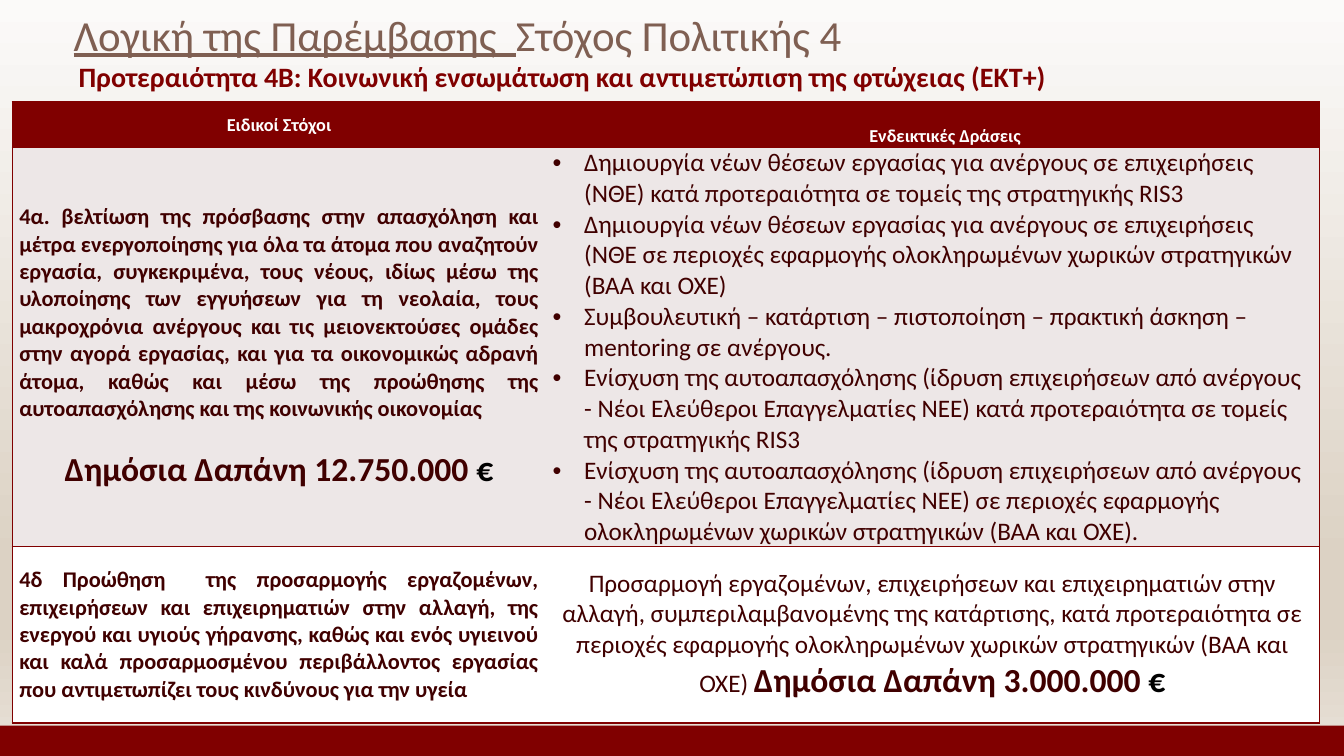
from dataclasses import dataclass

from lxml.etree import SubElement
from pptx import Presentation
from pptx.dml.color import RGBColor
from pptx.enum.shapes import MSO_SHAPE
from pptx.enum.text import MSO_ANCHOR, MSO_AUTO_SIZE, PP_ALIGN
from pptx.oxml.ns import qn
from pptx.slide import Slide
from pptx.table import _Cell
from pptx.text.text import TextFrame
from pptx.util import Pt


@dataclass(frozen=True)
class Theme:
    font: str = "Calibri"
    maroon: str = "800000"
    ink: str = "400000"
    title: str = "7F5F52"
    black: str = "000000"
    white: str = "FFFFFF"
    band: str = "EDE7E7"
    backdrop: tuple = ((0, "FBFAF9"), (74, "DCD2C4"), (83, "DCD2C4"), (100, "E8E1D8"))
    title_size: float = 30.6
    subtitle_size: float = 20
    header_size: float = 13
    goal_size: float = 16
    action_size: float = 18
    spend_size: float = 24


THEME = Theme()


@dataclass(frozen=True)
class Span:
    text: str
    size: float | None = None
    bold: bool | None = None
    color: str | None = None
    underline: bool | None = None


@dataclass(frozen=True)
class Para:
    spans: tuple[Span, ...]
    size: float
    color: str = THEME.ink
    bold: bool = False
    align: PP_ALIGN = PP_ALIGN.LEFT
    bullet: bool = False
    before: float = 0
    line: float | None = None
    left: float = 0


@dataclass(frozen=True)
class CellContent:
    paras: tuple[Para, ...]
    fill: str
    top_margin: float = 0


def write(frame: TextFrame, paras: tuple[Para, ...]) -> None:
    frame.word_wrap = True
    for index, item in enumerate(paras):
        para = frame.paragraphs[0] if index == 0 else frame.add_paragraph()
        para.alignment = item.align
        if item.before:
            para.space_before = Pt(item.before)
        if item.line:
            para.line_spacing = item.line
        properties = para._p.get_or_add_pPr()
        indent = 22.5 if item.bullet else 0
        properties.set("marL", str(Pt(item.left + indent)))
        properties.set("indent", str(-Pt(indent)))
        if item.bullet:
            SubElement(properties, qn("a:buFont")).set("typeface", "Arial")
            SubElement(properties, qn("a:buChar")).set("char", "•")
        para.font.name = THEME.font
        para.font.size = Pt(item.size)
        para.font.bold = item.bold
        para.font.color.rgb = RGBColor.from_string(item.color)
        for piece in item.spans:
            span = para.add_run()
            span.text = piece.text
            if piece.size:
                span.font.size = Pt(piece.size)
            if piece.bold is not None:
                span.font.bold = piece.bold
            if piece.color:
                span.font.color.rgb = RGBColor.from_string(piece.color)
            if piece.underline is not None:
                span.font.underline = piece.underline


def paint_background(page: Slide) -> None:
    fill = page.background.fill
    fill.gradient()
    fill.gradient_angle = 270
    stops = page.element.find(".//" + qn("a:gsLst"))
    for stop in list(stops):
        stops.remove(stop)
    for position, color in THEME.backdrop:
        stop = SubElement(stops, qn("a:gs"), pos=str(position * 1000))
        SubElement(stop, qn("a:srgbClr"), val=color)


def set_borders(cell: _Cell, visible: str) -> None:
    properties = cell._tc.get_or_add_tcPr()
    for index, side in enumerate("LRTB"):
        line = SubElement(properties, qn(f"a:ln{side}"), w=str(Pt(1)))
        if side in visible:
            solid = SubElement(line, qn("a:solidFill"))
            SubElement(solid, qn("a:srgbClr"), val=THEME.maroon)
        else:
            SubElement(line, qn("a:noFill"))
        properties.insert(index, line)


def header(text: str, left: float = 0, top_margin: float = 0) -> CellContent:
    para = Para((Span(text),), THEME.header_size, THEME.white, True, PP_ALIGN.CENTER, left=left)
    return CellContent((para,), THEME.maroon, top_margin)


def goal(text: str) -> Para:
    return Para((Span(text),), THEME.goal_size, bold=True, align=PP_ALIGN.JUSTIFY)


def spend(amount: str) -> tuple[Span, Span]:
    return (Span(f"Δημόσια Δαπάνη {amount} ", THEME.spend_size, True),
            Span("€", THEME.spend_size, True, THEME.black))


ACTIONS = (
    "Δημιουργία νέων θέσεων εργασίας για ανέργους σε επιχειρήσεις (ΝΘΕ) κατά προτεραιότητα σε τομείς της στρατηγικής RIS3",
    "Δημιουργία νέων θέσεων εργασίας για ανέργους σε επιχειρήσεις (ΝΘΕ σε περιοχές εφαρμογής ολοκληρωμένων χωρικών στρατηγικών (ΒΑΑ και ΟΧΕ)",
    "Συμβουλευτική – κατάρτιση – πιστοποίηση – πρακτική άσκηση – mentoring σε ανέργους.",
    "Ενίσχυση της αυτοαπασχόλησης (ίδρυση επιχειρήσεων από ανέργους - Νέοι Ελεύθεροι Επαγγελματίες ΝΕΕ) κατά προτεραιότητα σε τομείς της στρατηγικής RIS3",
    "Ενίσχυση της αυτοαπασχόλησης (ίδρυση επιχειρήσεων από ανέργους - Νέοι Ελεύθεροι Επαγγελματίες ΝΕΕ) σε περιοχές εφαρμογής ολοκληρωμένων χωρικών στρατηγικών (ΒΑΑ και ΟΧΕ).",
)
GOAL_A = "4α. βελτίωση της πρόσβασης στην απασχόληση και μέτρα ενεργοποίησης για όλα τα άτομα που αναζητούν εργασία, συγκεκριμένα, τους νέους, ιδίως μέσω της υλοποίησης των εγγυήσεων για τη νεολαία, τους μακροχρόνια ανέργους και τις μειονεκτούσες ομάδες στην αγορά εργασίας, και για τα οικονομικώς αδρανή άτομα, καθώς και μέσω της προώθησης της αυτοαπασχόλησης και της κοινωνικής οικονομίας"
GOAL_D = "4δ Προώθηση  της προσαρμογής εργαζομένων, επιχειρήσεων και επιχειρηματιών στην αλλαγή, της ενεργού και υγιούς γήρανσης, καθώς και ενός υγιεινού και καλά προσαρμοσμένου περιβάλλοντος εργασίας που αντιμετωπίζει τους κινδύνους για την υγεία"
ADAPTATION = "Προσαρμογή εργαζομένων, επιχειρήσεων και επιχειρηματιών στην αλλαγή, συμπεριλαμβανομένης της κατάρτισης, κατά προτεραιότητα σε περιοχές εφαρμογής ολοκληρωμένων χωρικών στρατηγικών (ΒΑΑ και ΟΧΕ) "

ROWS = (
    (header("Ειδικοί Στόχοι"), header("Ενδεικτικές Δράσεις", 18, 15.9)),
    (CellContent((goal(GOAL_A), Para(spend("12.750.000"), THEME.spend_size, bold=True,
                                     align=PP_ALIGN.CENTER, before=19.5)), THEME.band),
     CellContent(tuple(Para((Span(action),), THEME.action_size, bullet=True)
                       for action in ACTIONS), THEME.band)),
    (CellContent((goal(GOAL_D),), THEME.white),
     CellContent((Para((Span(ADAPTATION), *spend("3.000.000")), THEME.action_size,
                       align=PP_ALIGN.CENTER),), THEME.white)),
)
COLUMN_WIDTHS = (381, 552.5)
ROW_HEIGHTS = (32.5, 285, 126)
COLUMN_BORDERS = ("LTB", "RTB")


def add_goal_table(page: Slide) -> None:
    table = page.shapes.add_table(len(ROWS), len(COLUMN_WIDTHS), Pt(8.8), Pt(72.9),
                                  Pt(sum(COLUMN_WIDTHS)), Pt(sum(ROW_HEIGHTS))).table
    table.horz_banding = False
    for column, width in zip(table.columns, COLUMN_WIDTHS):
        column.width = Pt(width)
    for row, height, contents in zip(table.rows, ROW_HEIGHTS, ROWS):
        row.height = Pt(height)
        for cell, content, borders in zip(row.cells, contents, COLUMN_BORDERS):
            cell.margin_left = cell.margin_right = Pt(5)
            cell.margin_top, cell.margin_bottom = Pt(content.top_margin), Pt(0)
            cell.vertical_anchor = MSO_ANCHOR.MIDDLE
            cell.fill.solid()
            cell.fill.fore_color.rgb = RGBColor.from_string(content.fill)
            set_borders(cell, borders)
            write(cell.text_frame, content.paras)


def main() -> None:
    deck = Presentation()
    deck.slide_width, deck.slide_height = Pt(960), Pt(540)
    page = deck.slides.add_slide(deck.slide_layouts[5])
    paint_background(page)

    # Footer band
    footer = page.shapes.add_shape(MSO_SHAPE.RECTANGLE, Pt(0), Pt(518.4), Pt(960), Pt(21.6))
    footer.shadow.inherit = False
    footer.fill.solid()
    footer.fill.fore_color.rgb = RGBColor.from_string(THEME.maroon)
    footer.line.fill.background()

    # Title and priority line
    title = page.shapes.title
    title.left, title.top, title.width, title.height = Pt(45.4), Pt(5.8), Pt(749), Pt(41)
    title.text_frame.vertical_anchor = MSO_ANCHOR.BOTTOM
    title.text_frame.auto_size = MSO_AUTO_SIZE.NONE
    write(title.text_frame, (Para((Span("Λογική της Παρέμβασης  ", underline=True),
                                   Span("Στόχος Πολιτικής 4")),
                                  THEME.title_size, THEME.title, line=0.9),))
    priority = page.shapes.add_textbox(Pt(45.4), Pt(41.8), Pt(727), Pt(47.5))
    write(priority.text_frame, (Para(
        (Span("Προτεραιότητα 4Β: Κοινωνική ενσωμάτωση και αντιμετώπιση της φτώχειας (ΕΚΤ+)"),),
        THEME.subtitle_size, THEME.maroon, True, PP_ALIGN.JUSTIFY, line=0.9, left=3.6),))

    # Goals and actions
    add_goal_table(page)
    deck.save("out.pptx")


if __name__ == "__main__":
    main()
